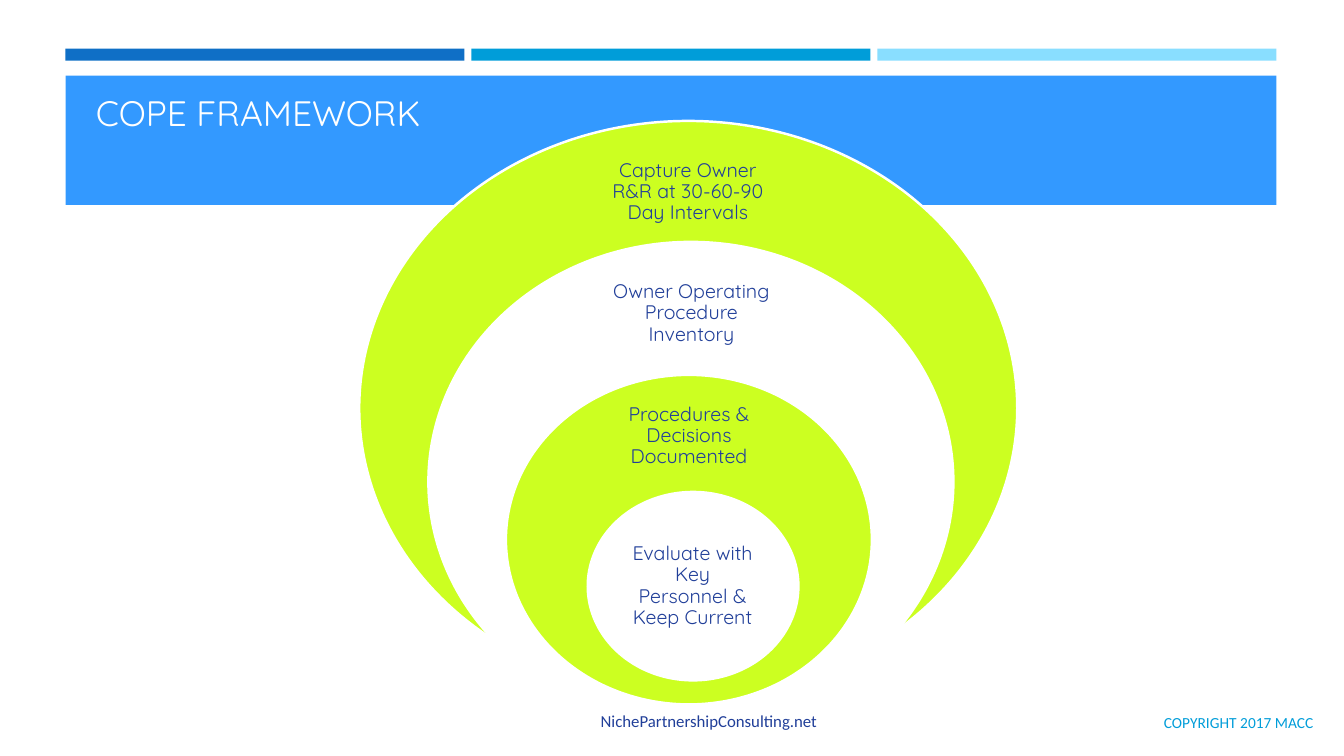
from pptx import Presentation
from pptx.dml.color import RGBColor
from pptx.enum.shapes import MSO_SHAPE
from pptx.enum.text import MSO_ANCHOR, PP_ALIGN
from pptx.util import Pt

RECTANGLE, ELLIPSE = MSO_SHAPE.RECTANGLE, MSO_SHAPE.OVAL
TOP, MIDDLE, BOTTOM = MSO_ANCHOR.TOP, MSO_ANCHOR.MIDDLE, MSO_ANCHOR.BOTTOM
LEFT, CENTER, RIGHT = PP_ALIGN.LEFT, PP_ALIGN.CENTER, PP_ALIGN.RIGHT

WHITE, LIME, NAVY = "FFFFFF", "CCFF21", "213F99"
BAND_BLUE, CYAN = "3399FF", "009DD9"
TITLE_LAYOUT = 5


def color(hex_string):
    return RGBColor.from_string(hex_string)


class SlideBuilder:
    heading_font = "Quicksand"
    body_font = "Calibri"

    def __init__(self, slide):
        self.slide = slide

    def shape(self, kind, box, fill, outline=None):
        shape = self.slide.shapes.add_shape(kind, *map(Pt, box))
        shape.shadow.inherit = False
        shape.fill.solid()
        shape.fill.fore_color.rgb = color(fill)
        if outline:
            shape.line.color.rgb = color(outline)
            shape.line.width = Pt(1.75)
        else:
            shape.line.fill.background()
        return shape

    def set_text(self, shape, text, font, size, text_color, align, anchor,
                 inset=None, spacing=None):
        frame = shape.text_frame
        frame.word_wrap = True
        frame.vertical_anchor = anchor
        if inset is not None:
            frame.margin_left = frame.margin_right = Pt(inset)
            frame.margin_top = frame.margin_bottom = Pt(inset)
        paragraph = frame.paragraphs[0]
        paragraph.alignment = align
        if spacing:
            paragraph.line_spacing = spacing
        run = paragraph.add_run()
        run.text = text
        run.font.name = font
        run.font.size = Pt(size)
        run.font.bold = False
        run.font.color.rgb = color(text_color)

    def text(self, box, *style, **layout):
        self.set_text(self.slide.shapes.add_textbox(*map(Pt, box)), *style, **layout)

    def title(self, box, text, size, text_color):
        title = self.slide.shapes.title
        title.left, title.top, title.width, title.height = map(Pt, box)
        self.set_text(title, text, self.heading_font, size, text_color, LEFT, MIDDLE)
        # Bring the title in front of the band
        self.slide.shapes._spTree.append(title._element)

    def ring(self, box, fill, label_box, label):
        self.shape(ELLIPSE, box, fill, outline=WHITE)
        self.text(label_box, label, self.heading_font, 14, NAVY, CENTER, MIDDLE,
                  inset=8, spacing=0.9)


def main():
    presentation = Presentation()
    presentation.slide_width, presentation.slide_height = Pt(960), Pt(540)
    layout = presentation.slide_layouts[TITLE_LAYOUT]
    builder = SlideBuilder(presentation.slides.add_slide(layout))

    # Accent bars
    margin, bar_width, gap = 46.8, 285, 5
    for index, fill in enumerate(("0F6FC6", CYAN, "89DEFF")):
        left = margin + index * (bar_width + gap)
        builder.shape(RECTANGLE, (left, 34.7, bar_width, 8.6), fill)

    # Copyright line and title band
    builder.text((584, 497, 361.4, 28.8), "COPYRIGHT 2017 MACC",
                 builder.body_font, 11, CYAN, RIGHT, BOTTOM)
    builder.shape(RECTANGLE, (margin, 54, 3 * bar_width + 2 * gap, 92.4), BAND_BLUE)

    # Nested rings, outermost first
    rings = (
        ((256.6, 86.4, 470, 410.4), LIME, (425.5, 106.6, 131.8, 61.2),
         "Capture Owner R&R at 30-60-90 Day Intervals"),
        ((306, 172.8, 375, 342.7), WHITE, (428.4, 193, 131, 61.9),
         "Owner Operating Procedure Inventory"),
        ((361.4, 267.8, 261.4, 235.4), LIME, (431.3, 285.1, 121.7, 53.3),
         "Procedures & Decisions Documented"),
        ((419.8, 351.4, 150.5, 134.6), WHITE, (441.4, 385.2, 106.6, 67),
         "Evaluate with Key Personnel & Keep Current"),
    )
    for ring in rings:
        builder.ring(*ring)

    # Title
    builder.title((61.2, 53.6, 838.8, 53.3), "COPE FRAMEWORK", 25.2, WHITE)

    # Web address
    footer = builder.shape(RECTANGLE, (422, 504, 177.8, 36), WHITE)
    builder.set_text(footer, "NichePartnershipConsulting.net",
                     builder.body_font, 12, NAVY, LEFT, TOP)

    presentation.save("out.pptx")


if __name__ == "__main__":
    main()
